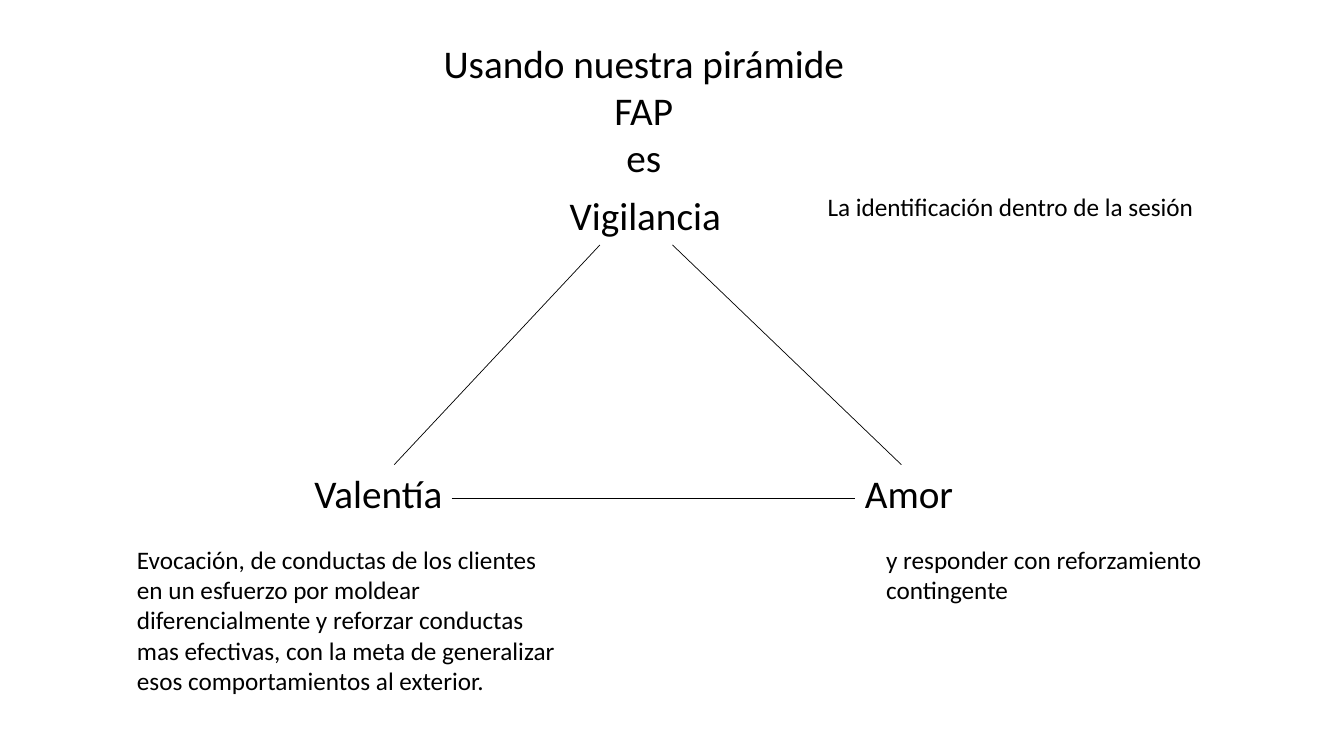
from lxml import etree
from pptx import Presentation
from pptx.dml.color import RGBColor
from pptx.enum.shapes import MSO_CONNECTOR
from pptx.enum.text import MSO_AUTO_SIZE, PP_ALIGN
from pptx.oxml.ns import qn
from pptx.util import Inches, Pt

BLACK = RGBColor(0, 0, 0)
FONT = "Calibri"
HEADING, NOTE = 28, 18  # text sizes in points
INSET = 0.1

# Shared rows of the layout, in inches
TOP, APEX, BASE, NOTES = 0.34, 1.85, 4.61, 5.35
APEX_BOTTOM, BASE_MIDDLE = 2.43, 4.94

TITLE = ["Usando nuestra pirámide", "FAP", "es"]

# text, left, top, width, height, left inset
CORNERS = [
    ("Vigilancia", 5.03, APEX, 2.65, 0.57, 0.62),
    ("Valentía", 3.02, BASE, 1.79, 0.57, INSET),
    ("Amor", 8.48, BASE, 1.4, 0.57, INSET),
]
EXPLANATIONS = [
    ("La identificación dentro de la sesión", 8.11, APEX, 3.92, 0.4),
    ("y responder con reforzamiento contingente", 8.69, NOTES, 3.71, 0.71),
    ("Evocación, de conductas de los clientes en un esfuerzo por moldear "
     "diferencialmente y reforzar conductas mas efectivas, con la meta de "
     "generalizar esos comportamientos al exterior.",
     1.26, NOTES, 4.35, 1.62),
]

# Triangle sides: x1, y1, x2, y2
SIDES = [
    (3.91, BASE, 5.95, APEX_BOTTOM),
    (6.67, APEX_BOTTOM, 8.94, BASE),
    (4.48, BASE_MIDDLE, 8.48, BASE_MIDDLE),
]

prs = Presentation()
prs.slide_width, prs.slide_height = Inches(13.33), Inches(7.5)
s = prs.slides.add_slide(prs.slide_layouts[6])


def add_text(text, left, top, width, height, size, inset=INSET,
             align=PP_ALIGN.LEFT):
    box = s.shapes.add_textbox(*map(Inches, (left, top, width, height)))
    tf = box.text_frame
    tf.word_wrap = True
    tf.auto_size = MSO_AUTO_SIZE.SHAPE_TO_FIT_TEXT
    tf.margin_left = Inches(inset)
    tf.text = text
    for p in tf.paragraphs:
        p.alignment = align
        for r in p.runs:
            r.font.name = FONT
            r.font.size = Pt(size)
            r.font.color.rgb = BLACK


# Title
add_text("\n".join(TITLE), 3.31, TOP, 6.15, 1.51, HEADING,
         align=PP_ALIGN.CENTER)

# Corners of the triangle
for text, left, top, width, height, inset in CORNERS:
    add_text(text, left, top, width, height, HEADING, inset)

# Sides of the triangle
for ends in SIDES:
    line = s.shapes.add_connector(MSO_CONNECTOR.STRAIGHT, *map(Inches, ends))
    line.line.color.rgb = BLACK
    line.line.width = Pt(0.5)
    etree.SubElement(line._element.spPr, qn("a:effectLst"))

# Explanations beside the corners
for item in EXPLANATIONS:
    add_text(*item, NOTE)

prs.save("out.pptx")
